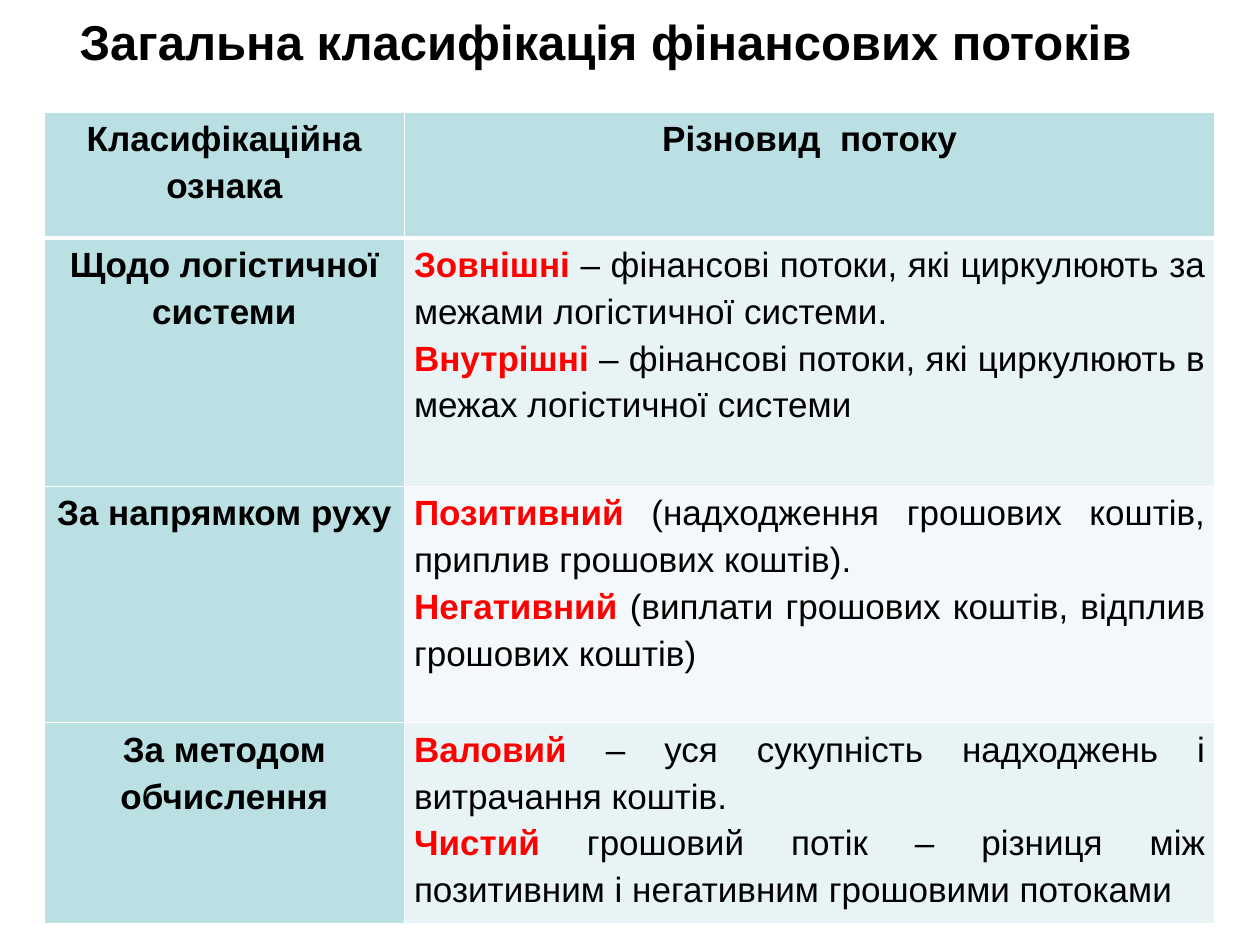
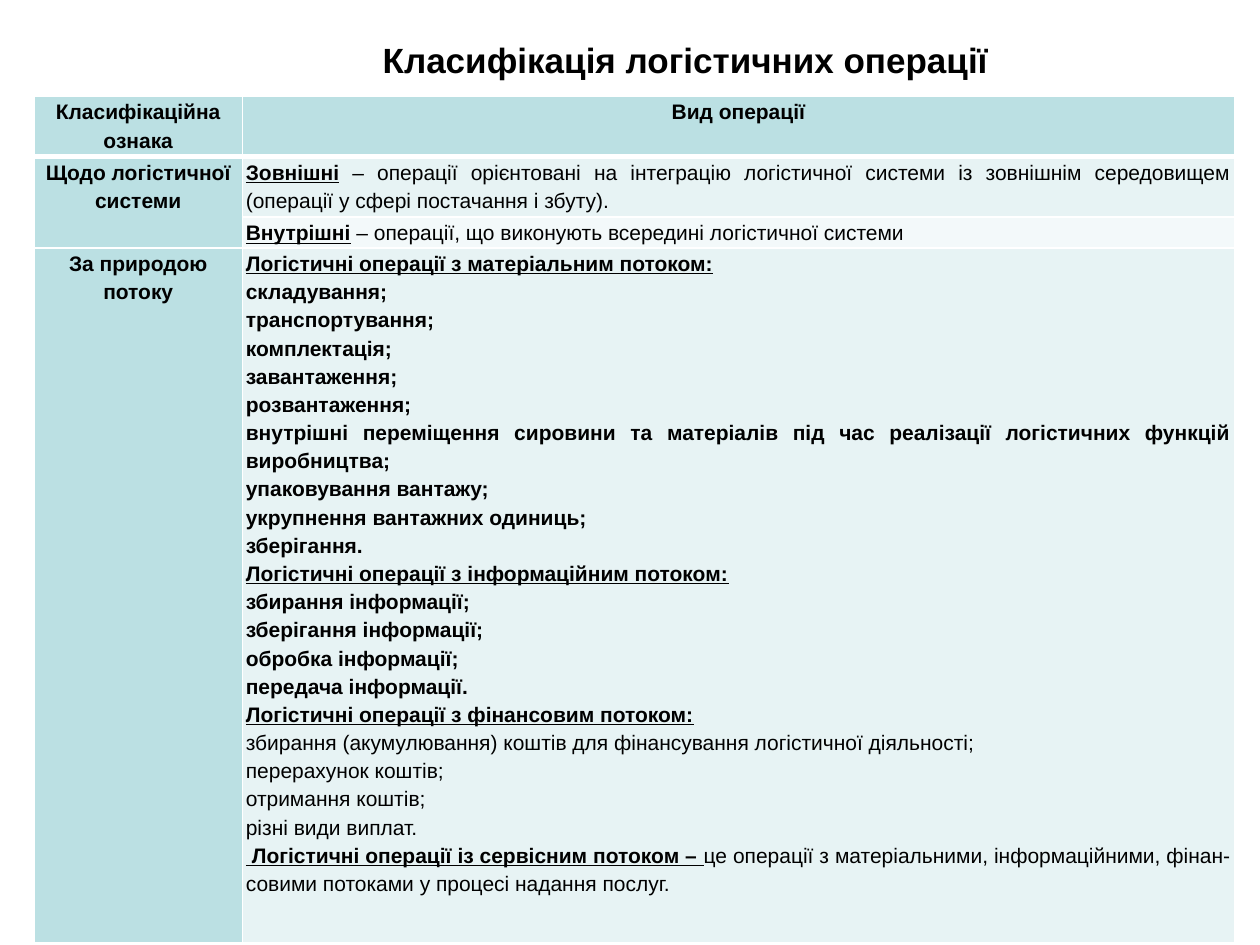
from lxml import etree
from pptx import Presentation
from pptx.dml.color import RGBColor
from pptx.enum.text import MSO_ANCHOR, PP_ALIGN
from pptx.oxml.ns import qn
from pptx.util import Pt

LEFT, CENTER, JUSTIFY = PP_ALIGN.LEFT, PP_ALIGN.CENTER, PP_ALIGN.JUSTIFY
TOP = MSO_ANCHOR.TOP
FONT = "Arial"
BLACK = RGBColor(0x00, 0x00, 0x00)
WHITE = RGBColor(0xFF, 0xFF, 0xFF)
RED = RGBColor(0xFF, 0x00, 0x00)
TEAL = RGBColor(0xBB, 0xE0, 0xE3)
BANDS = (RGBColor(0xF3, 0xF9, 0xFA), RGBColor(0xE7, 0xF3, 0xF4))

PLAIN = dict(bold=False)
BOLD = dict(bold=True)
KEY = dict(bold=True, color=RED)
HEAD = dict(bold=True, underline=True)


def lines(style, *texts):
    return [[(text, style)] for text in texts]


FLOW_ROWS = [
    ("Класифікаційна ознака", lines(BOLD, "Різновид  потоку")),
    ("Щодо логістичної системи", [
        [("Зовнішні ", KEY),
         ("– фінансові потоки, які циркулюють за межами логістичної системи.", PLAIN)],
        [("Внутрішні ", KEY),
         ("– фінансові потоки, які циркулюють в межах логістичної системи", PLAIN)],
    ]),
    ("За напрямком руху", [
        [("Позитивний", KEY),
         (" (надходження грошових коштів, приплив грошових коштів).", PLAIN)],
        [("Негативний ", KEY),
         ("(виплати грошових коштів, відплив грошових коштів)", PLAIN)],
    ]),
    ("За методом обчислення", [
        [("Валовий", KEY),
         (" – уся сукупність надходжень і витрачання коштів.", PLAIN)],
        [("Чистий", KEY),
         (" грошовий потік – різниця між позитивним і негативним грошовими потоками", PLAIN)],
    ]),
]

OPERATION_ROWS = [
    ("Класифікаційна ознака", lines(BOLD, "Вид операції")),
    ("Щодо логістичної системи", [
        [("Зовнішні", HEAD),
         (" – операції орієнтовані на інтеграцію логістичної системи із зовнішнім "
          "середовищем (операції у сфері постачання і збуту).", PLAIN)],
    ]),
    (None, [
        [("Внутрішні", HEAD),
         (" – операції, що виконують всередині логістичної системи", PLAIN)],
    ]),
    ("За природою потоку", [
        *lines(HEAD, "Логістичні операції з матеріальним потоком:"),
        *lines(BOLD, "складування;", "транспортування;", "комплектація;",
               "завантаження;", "розвантаження;",
               "внутрішні переміщення сировини та матеріалів під час реалізації "
               "логістичних функцій виробництва;",
               "упаковування вантажу;", "укрупнення вантажних одиниць;", "зберігання."),
        *lines(HEAD, "Логістичні операції з інформаційним потоком:"),
        *lines(BOLD, "збирання інформації;", "зберігання інформації;",
               "обробка інформації;", "передача інформації."),
        *lines(HEAD, "Логістичні операції з фінансовим потоком:"),
        *lines(PLAIN,
               "збирання (акумулювання) коштів для фінансування логістичної діяльності;",
               "перерахунок коштів;", "отримання коштів;", "різні види виплат."),
        [(" Логістичні операції із сервісним потоком – ", HEAD),
         ("це операції з матеріальними, інформаційними, фінан-совими потоками "
          "у процесі надання послуг.", PLAIN)],
    ]),
]

SLIDES = [
    dict(title="Загальна класифікація фінансових потоків", title_size=28,
         title_at=(3, 3, 659, 40), title_align=LEFT, rows=FLOW_ROWS, size=20,
         table_at=(25.2, 64), widths=(206, 463), heights=(72, 142, 135, 115), inset=5.4),
    dict(title="Класифікація логістичних операції", title_size=20,
         title_at=(42.5, 18.5, 663, 32), title_align=CENTER, rows=OPERATION_ROWS, size=12,
         table_at=(19.5, 55), widths=(119, 567), heights=(34.5, 34.5, 17.5, 380), inset=2),
]


def add_run(p, text, size, bold, color=BLACK, underline=False):
    r = p.add_run()
    r.text = text
    r.font.name = FONT
    r.font.size = Pt(size)
    r.font.bold = bold
    r.font.underline = underline
    r.font.color.rgb = color


def add_title(s, spec):
    tf = s.shapes.add_textbox(*map(Pt, spec["title_at"])).text_frame
    tf.word_wrap = True
    tf.vertical_anchor = TOP
    tf.margin_left = Pt(42.5)
    p = tf.paragraphs[0]
    p.alignment = spec["title_align"]
    add_run(p, spec["title"], spec["title_size"], True)


def add_borders(cell, row):
    tcPr = cell._tc.get_or_add_tcPr()
    widths = dict(lnL=1, lnR=1, lnT=3 if row == 1 else 1, lnB=3 if row == 0 else 1)
    for side, width in widths.items():
        ln = etree.SubElement(tcPr, qn("a:" + side), w=str(Pt(width)))
        fill = etree.SubElement(ln, qn("a:solidFill"))
        etree.SubElement(fill, qn("a:srgbClr"), val=str(WHITE))


def fill_cell(cell, paragraphs, align, size, inset):
    cell.margin_left = cell.margin_right = Pt(inset)
    cell.margin_top = cell.margin_bottom = 0
    tf = cell.text_frame
    for i, runs in enumerate(paragraphs):
        p = tf.add_paragraph() if i else tf.paragraphs[0]
        p.alignment = align
        p.line_spacing = 1.2
        for text, style in runs:
            add_run(p, text, size, **style)


def add_classification(s, spec):
    rows, widths, heights = spec["rows"], spec["widths"], spec["heights"]
    box = (*spec["table_at"], sum(widths), sum(heights))
    table = s.shapes.add_table(len(rows), len(widths), *map(Pt, box)).table
    table.first_row = table.horz_banding = False
    for column, width in zip(table.columns, widths):
        column.width = Pt(width)
    for i, (feature, kinds) in enumerate(rows):
        table.rows[i].height = Pt(heights[i])
        feature_cell, kinds_cell = table.cell(i, 0), table.cell(i, 1)
        for cell, color in ((feature_cell, TEAL), (kinds_cell, BANDS[i % 2] if i else TEAL)):
            add_borders(cell, i)
            cell.fill.solid()
            cell.fill.fore_color.rgb = color
        if feature:
            fill_cell(feature_cell, lines(BOLD, feature), CENTER, spec["size"], spec["inset"])
        else:
            table.cell(i - 1, 0).merge(feature_cell)
        fill_cell(kinds_cell, kinds, JUSTIFY if i else CENTER, spec["size"], spec["inset"])


def main():
    prs = Presentation()
    prs.slide_width, prs.slide_height = Pt(720), Pt(540)
    for spec in SLIDES:
        s = prs.slides.add_slide(prs.slide_layouts[6])
        add_classification(s, spec)
        add_title(s, spec)
    prs.save("out.pptx")


if __name__ == "__main__":
    main()
